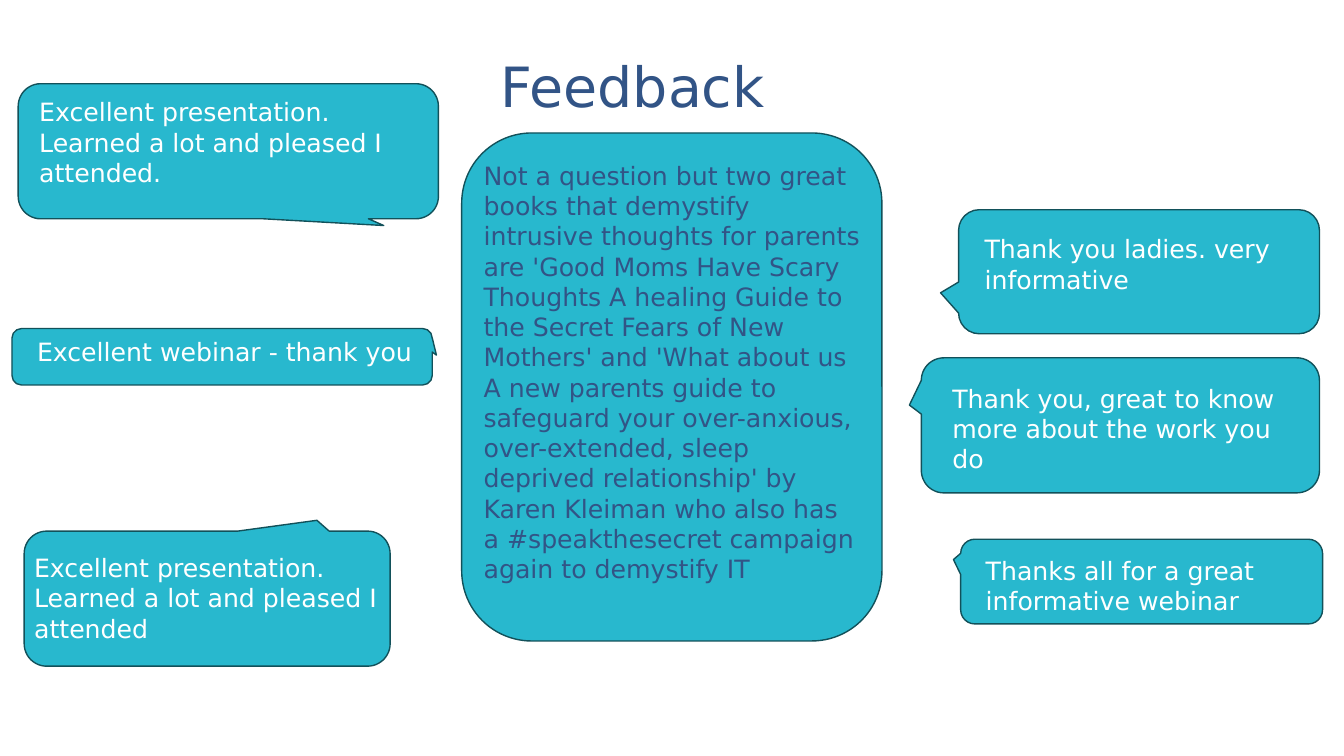
from pptx import Presentation
from pptx.dml.color import RGBColor
from pptx.enum.shapes import MSO_SHAPE as Shape
from pptx.enum.text import MSO_ANCHOR as Anchor, MSO_AUTO_SIZE as Fit
from pptx.util import Pt

FONT = "DejaVu Sans"
HUES = {"teal": "28B8CE", "edge": "12515A", "navy": "325486", "white": "FFFFFF"}

BOOKS = (
    "Not a question but two great books that demystify intrusive thoughts for "
    "parents are 'Good Moms Have Scary Thoughts A healing Guide to the Secret "
    "Fears of New Mothers' and 'What about us A new parents guide to safeguard "
    "your over-anxious, over-extended, sleep deprived relationship' by Karen "
    "Kleiman who also has a #speakthesecret campaign again to demystify IT"
)

# Bubble box, tip of its tail, text box, words, text colour
QUOTES = [
    ((329.8, 95, 300.2, 362.9), (-0.22, 0.5), (338.4, 110.9, 283, 334.1),
     BOOKS, "navy"),
    ((13, 59.8, 300.2, 96.5), (0.37, 0.55), (20.9, 65.5, 284.4, 72.7),
     "Excellent presentation. Learned a lot and pleased I attended.", "white"),
    ((8.6, 234.7, 300.2, 40.3), (0.51, -0.03), (19.4, 236.9, 300.2, 29),
     "Excellent webinar - thank you", "white"),
    ((17.3, 379.4, 261.4, 96.5), (0.3, -0.58), (17.3, 391, 285.1, 72.7),
     "Excellent presentation. Learned a lot and pleased I attended", "white"),
    ((684.7, 149.8, 257.8, 88.6), (-0.55, 0.17), (696.2, 163.4, 236.2, 51),
     "Thank you ladies. very informative", "white"),
    ((658.1, 255.6, 284.4, 96.5), (-0.53, -0.15), (673.2, 270, 260.6, 72.7),
     "Thank you, great to know more about the work you do", "white"),
    ((686.2, 385.2, 258.5, 60.5), (-0.52, -0.26), (697, 393.1, 236.9, 51),
     "Thanks all for a great informative webinar", "white"),
]


def tint(name):
    return RGBColor.from_string(HUES[name])


def points(box):
    return [Pt(side) for side in box]


def add_bubble(slide, box, tip):
    bubble = slide.shapes.add_shape(Shape.ROUNDED_RECTANGULAR_CALLOUT, *points(box))
    bubble.shadow.inherit = False
    bubble.adjustments[0], bubble.adjustments[1] = tip
    bubble.fill.solid()
    bubble.fill.fore_color.rgb = tint("teal")
    bubble.line.color.rgb = tint("edge")
    bubble.line.width = Pt(1)


def add_text(slide, box, words, hue, size=18):
    frame = slide.shapes.add_textbox(*points(box)).text_frame
    frame.word_wrap = True
    run = frame.paragraphs[0].add_run()
    run.text = words
    run.font.name = FONT
    run.font.size = Pt(size)
    run.font.color.rgb = tint(hue)
    return frame


def add_title(slide):
    frame = add_text(slide, (350.6, 5.8, 258.5, 79.2), "Feedback", "navy", 39.6)
    frame.vertical_anchor = Anchor.BOTTOM
    frame.margin_bottom = 0


def main():
    deck = Presentation()
    deck.slide_width, deck.slide_height = Pt(960), Pt(540)
    slide = deck.slides.add_slide(deck.slide_layouts[6])
    add_title(slide)
    for box, tip, area, words, hue in QUOTES:
        add_bubble(slide, box, tip)
        frame = add_text(slide, area, words, hue)
        frame.auto_size = Fit.SHAPE_TO_FIT_TEXT
    deck.save("out.pptx")


if __name__ == "__main__":
    main()
